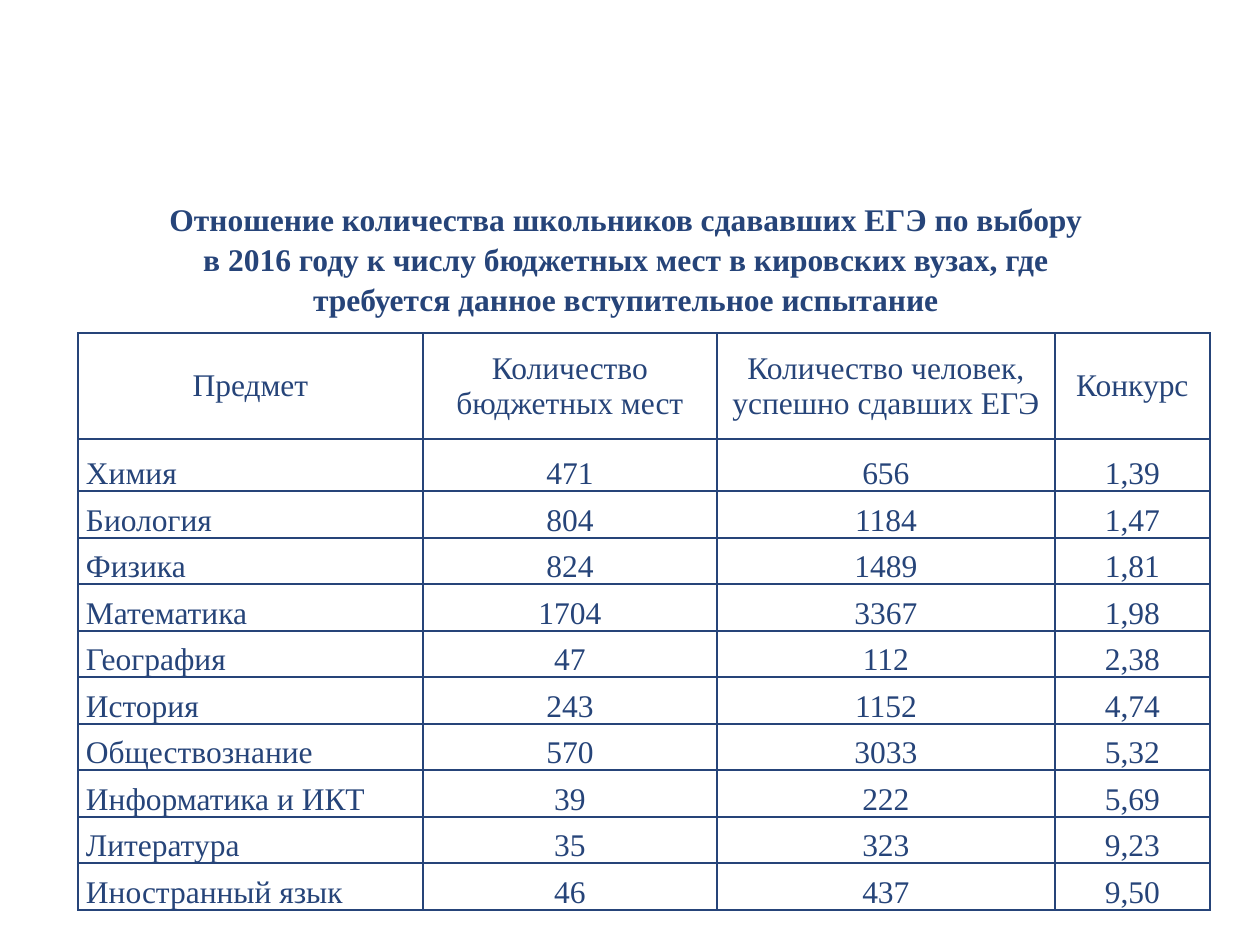
from dataclasses import dataclass

from lxml.etree import SubElement
from pptx import Presentation
from pptx.dml.color import RGBColor
from pptx.enum.text import MSO_ANCHOR as Anchor, PP_ALIGN as Align
from pptx.oxml.ns import qn
from pptx.util import Emu, Pt

PX = 914400 // 126
COLORS = {"ink": "264479"}
FONT = "Times New Roman"
TITLE = ("Отношение количества школьников сдававших ЕГЭ по выбору в 2016 году "
         "к числу бюджетных мест в кировских вузах, где требуется данное "
         "вступительное испытание")
HEADINGS = ("Предмет", "Количество бюджетных мест",
            "Количество человек, успешно сдавших ЕГЭ", "Конкурс")
COLUMN_WIDTHS = (345, 294, 338, 155)
HEADER_HEIGHT = 106
FIRST_ROW_HEIGHT = 52
OTHER_ROWS_HEIGHT = 419


@dataclass(frozen=True)
class Subject:
    name: str
    places: str
    passed: str
    contest: str

    def texts(self) -> tuple:
        return self.name, self.places, self.passed, self.contest


SUBJECTS = (
    Subject("Химия", "471", "656", "1,39"),
    Subject("Биология", "804", "1184", "1,47"),
    Subject("Физика", "824", "1489", "1,81"),
    Subject("Математика", "1704", "3367", "1,98"),
    Subject("География", "47", "112", "2,38"),
    Subject("История", "243", "1152", "4,74"),
    Subject("Обществознание", "570", "3033", "5,32"),
    Subject("Информатика и ИКТ", "39", "222", "5,69"),
    Subject("Литература", "35", "323", "9,23"),
    Subject("Иностранный язык", "46", "437", "9,50"),
)


def px(length: int) -> Emu:
    return Emu(length * PX)


def write(frame, text: str, *, align=Align.CENTER, bold=False, spacing=1.0) -> None:
    para = frame.paragraphs[0]
    para.alignment = align
    para.line_spacing = spacing
    span = para.add_run()
    span.text = text
    span.font.name = FONT
    span.font.size = Pt(18)
    span.font.bold = bold
    span.font.color.rgb = RGBColor.from_string(COLORS["ink"])


def add_borders(cell) -> None:
    properties = cell._tc.get_or_add_tcPr()
    for side in ("a:lnL", "a:lnR", "a:lnT", "a:lnB"):
        line = SubElement(properties, qn(side), w=str(Pt(1)))
        fill = SubElement(line, qn("a:solidFill"))
        SubElement(fill, qn("a:srgbClr"), val=COLORS["ink"])


def format_cell(cell, text: str, *, anchor, align=Align.CENTER, left=0, right=0) -> None:
    add_borders(cell)
    cell.fill.background()
    cell.vertical_anchor = anchor
    cell.margin_left, cell.margin_right = px(left), px(right)
    cell.margin_top = cell.margin_bottom = 0
    write(cell.text_frame, text, align=align)


def row_heights() -> list:
    count = len(SUBJECTS) - 1
    edges = [round(i * OTHER_ROWS_HEIGHT / count) for i in range(count + 1)]
    others = [low - high for high, low in zip(edges, edges[1:])]
    return [HEADER_HEIGHT, FIRST_ROW_HEIGHT, *others]


def add_title(page) -> None:
    title = page.shapes.title
    title.left, title.top, title.width, title.height = px(152), px(192), px(948), px(127)
    frame = title.text_frame
    frame.word_wrap = True
    frame.vertical_anchor = Anchor.TOP
    write(frame, TITLE, bold=True, spacing=1.05)


def add_subject_table(page) -> None:
    heights = row_heights()
    table = page.shapes.add_table(
        len(heights), len(COLUMN_WIDTHS), px(78), px(333),
        px(sum(COLUMN_WIDTHS)), px(sum(heights))).table
    table.first_row = table.horz_banding = False
    for column, width in zip(table.columns, COLUMN_WIDTHS):
        column.width = px(width)
    for row, height in zip(table.rows, heights):
        row.height = px(height)
    for c, heading in enumerate(HEADINGS):
        format_cell(table.cell(0, c), heading, anchor=Anchor.MIDDLE, left=9, right=9)
    for r, subject in enumerate(SUBJECTS, 1):
        for c, text in enumerate(subject.texts()):
            format_cell(table.cell(r, c), text, anchor=Anchor.BOTTOM,
                        align=Align.CENTER if c else Align.LEFT, left=0 if c else 8)


def main() -> None:
    deck = Presentation()
    deck.slide_width, deck.slide_height = px(1260), px(945)
    page = deck.slides.add_slide(deck.slide_layouts[5])
    add_title(page)
    add_subject_table(page)
    deck.save("out.pptx")


if __name__ == "__main__":
    main()
